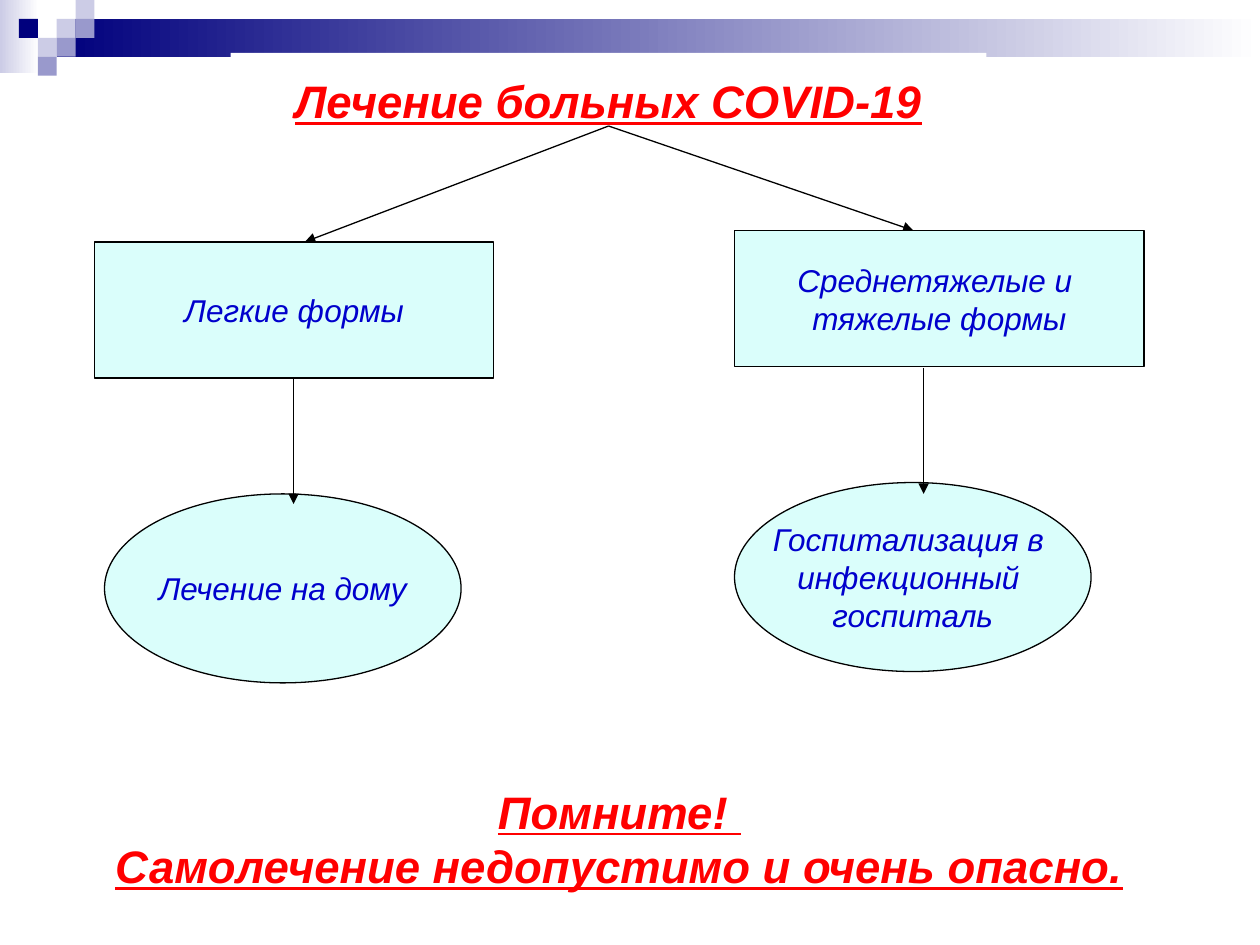
from dataclasses import dataclass

from pptx import Presentation
from pptx import util as u
from pptx.dml.color import RGBColor
from pptx.enum import shapes, text
from pptx.oxml import ns, xmlchemy

RECT = shapes.MSO_SHAPE.RECTANGLE
OVAL = shapes.MSO_SHAPE.OVAL


@dataclass(frozen=True)
class Theme:
    font: str = "Arial"
    heading_size: int = 26
    node_size: int = 18
    line_width: float = 0.75
    heading: str = "FF0000"
    node_text: str = "0000CC"
    node_fill: str = "DAFEFB"
    outline: str = "000000"
    paper: str = "FFFFFF"
    navy: str = "00007D"
    mid: str = "9999CC"
    pale: str = "CCCCE6"


THEME = Theme()


def rgb(value):
    return RGBColor.from_string(value)


def inches(box):
    return [u.Inches(length) for length in box]


def add_block(slide, kind, box, fill, fade_to=None):
    """Unlined shape, either plain or fading from left to right."""
    block = slide.shapes.add_shape(kind, *inches(box))
    block.shadow.inherit = False
    block.line.fill.background()
    if fade_to:
        block.fill.gradient()
        block.fill.gradient_angle = 0
        for stop, color in zip(block.fill.gradient_stops, (fill, fade_to)):
            stop.color.rgb = rgb(color)
    else:
        block.fill.solid()
        block.fill.fore_color.rgb = rgb(fill)
    return block


def write_lines(frame, lines, size, color, heading=False):
    for index, line in enumerate(lines):
        paragraph = frame.paragraphs[0] if index == 0 else frame.add_paragraph()
        paragraph.alignment = text.PP_ALIGN.CENTER
        run = paragraph.add_run()
        run.text = line
        run.font.name = THEME.font
        run.font.size = u.Pt(size)
        run.font.color.rgb = rgb(color)
        run.font.italic = True
        run.font.bold = run.font.underline = heading


def write_heading(frame, lines):
    write_lines(frame, lines, THEME.heading_size, THEME.heading, heading=True)


def center_unwrapped(frame):
    frame.word_wrap = False
    frame.vertical_anchor = text.MSO_ANCHOR.MIDDLE


def add_node(slide, kind, box, lines):
    node = add_block(slide, kind, box, THEME.node_fill)
    node.line.color.rgb = rgb(THEME.outline)
    node.line.width = u.Pt(THEME.line_width)
    center_unwrapped(node.text_frame)
    write_lines(node.text_frame, lines, THEME.node_size, THEME.node_text)


def add_arrow(slide, start, end):
    arrow = slide.shapes.add_connector(
        shapes.MSO_CONNECTOR.STRAIGHT, *inches(start + end))
    arrow.line.color.rgb = rgb(THEME.outline)
    arrow.line.width = u.Pt(THEME.line_width)
    properties = arrow._element.spPr
    head = xmlchemy.OxmlElement("a:tailEnd")
    head.set("type", "triangle")
    properties.find(ns.qn("a:ln")).append(head)
    properties.append(xmlchemy.OxmlElement("a:effectLst"))


def add_header_band(slide):
    add_block(slide, RECT, (0, 0, 0.31, 0.58), THEME.pale, THEME.paper)
    add_block(slide, RECT, (0.45, 0.15, 9.55, 0.3), THEME.navy, THEME.paper)
    # Mosaic squares, as column and row on a square grid
    cell = 0.15
    mosaic = [
        (3, 1, THEME.pale), (4, 0, THEME.pale), (4, 1, THEME.mid),
        (2, 2, THEME.pale), (1, 1, THEME.navy), (3, 2, THEME.mid),
        (2, 3, THEME.mid),
    ]
    for column, row, color in mosaic:
        add_block(slide, RECT, (column * cell, row * cell, cell, cell), color)


def add_title(slide):
    title = add_block(slide, RECT, (1.83, 0.42, 6, 0.75), THEME.paper)
    center_unwrapped(title.text_frame)
    write_heading(title.text_frame, ["Лечение больных COVID-19"])


def add_warning(slide):
    warning = slide.shapes.add_textbox(*inches((0.33, 6.17, 9.17, 0.97)))
    warning.text_frame.word_wrap = True
    warning.text_frame.auto_size = text.MSO_AUTO_SIZE.SHAPE_TO_FIT_TEXT
    write_heading(warning.text_frame,
                  ["Помните! ", "Самолечение недопустимо и очень опасно."])


def main():
    deck = Presentation()
    deck.slide_width, deck.slide_height = u.Inches(10), u.Inches(7.5)
    slide = deck.slides.add_slide(deck.slide_layouts[6])

    add_header_band(slide)
    add_title(slide)

    # Where each group of patients is treated
    add_node(slide, OVAL, (5.83, 3.83, 2.83, 1.5),
             ["Госпитализация в ", "инфекционный ", "госпиталь"])
    add_node(slide, OVAL, (0.83, 3.92, 2.83, 1.5), ["Лечение на дому"])

    # Arrows from severity to treatment, then from title to severity
    for x, top in ((2.33, 3), (7.33, 2.92)):
        add_arrow(slide, (x, top), (x, top + 1))
    for severity_top in ((2.42, 1.92), (7.25, 1.83)):
        add_arrow(slide, (4.83, 1), severity_top)

    # Severity of the disease
    add_node(slide, RECT, (0.75, 1.92, 3.17, 1.08), ["Легкие формы"])
    add_node(slide, RECT, (5.83, 1.83, 3.25, 1.08),
             ["Среднетяжелые и ", "тяжелые формы"])

    add_warning(slide)
    deck.save("out.pptx")


if __name__ == "__main__":
    main()
